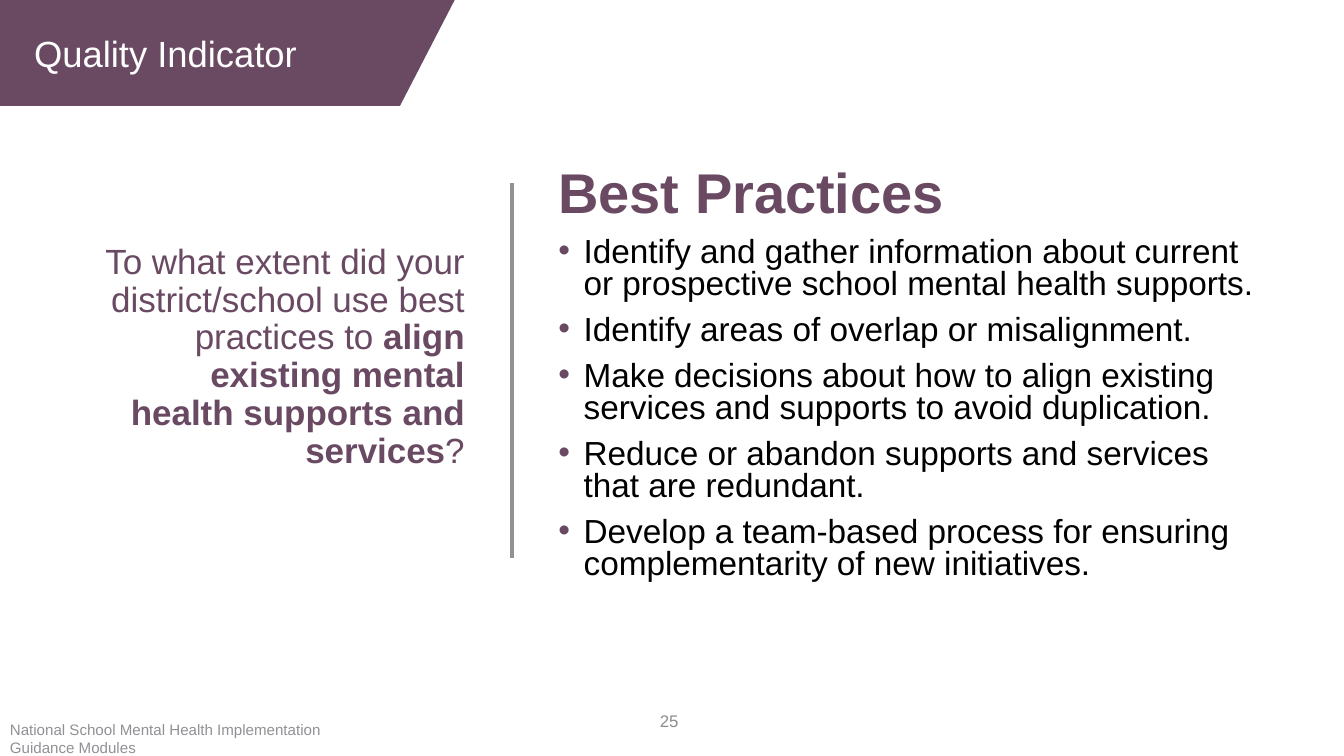
from dataclasses import dataclass

from lxml import etree
from pptx import Presentation
from pptx import util as u
from pptx.dml.color import RGBColor
from pptx.enum import shapes, text
from pptx.oxml import ns


@dataclass(frozen=True)
class Theme:
    """Colours, font and type sizes of the deck."""
    plum: str = "6A4A62"
    white: str = "FFFFFF"
    black: str = "000000"
    grey: str = "919195"
    pale: str = "8C8C8C"
    font: str = "Arial"
    head: float = 40
    label: float = 26
    ask: float = 25
    body: float = 23.8
    page: float = 12
    foot: float = 10.8


class Board:
    """Draws styled elements on one slide, with lengths in centimetres."""

    def __init__(self, slide, theme):
        self.slide = slide
        self.theme = theme

    def banner(self, points, color):
        """Draw a filled outline through the points."""
        first, *rest = [(u.Cm(x), u.Cm(y)) for x, y in points]
        pen = self.slide.shapes.build_freeform(*first)
        pen.add_line_segments(rest, close=True)
        form = pen.convert_to_shape()
        form.shadow.inherit = False
        form.fill.solid()
        form.fill.fore_color.rgb = RGBColor.from_string(color)
        form.line.fill.background()

    def rule(self, x, top, end, color, width):
        """Draw a vertical line."""
        line = self.slide.shapes.add_connector(
            shapes.MSO_CONNECTOR.STRAIGHT, u.Cm(x), u.Cm(top), u.Cm(x), u.Cm(end))
        line.line.color.rgb = RGBColor.from_string(color)
        line.line.width = u.Pt(width)
        props = line._element.spPr
        etree.SubElement(props, ns.qn("a:effectLst"))

    def box(self, left, top, width, height, middle=False, above=0.13, below=0.13):
        """Add an empty wrapping text box and return its frame."""
        area = self.slide.shapes.add_textbox(*map(u.Cm, (left, top, width, height)))
        frame = area.text_frame
        frame.word_wrap = True
        frame.margin_top, frame.margin_bottom = u.Cm(above), u.Cm(below)
        if middle:
            frame.vertical_anchor = text.MSO_ANCHOR.MIDDLE
        return frame

    def para(self, frame, words, size, color, bold=False, right=False,
             lead=None, gap=None, dot=None):
        """Write one paragraph, whose words may be (string, bold) pairs."""
        fresh = not frame.paragraphs[0].runs
        para = frame.paragraphs[0] if fresh else frame.add_paragraph()
        if lead:
            para.line_spacing = lead
        if gap and not fresh:
            para.space_before = u.Pt(gap)
        if right:
            para.alignment = text.PP_ALIGN.RIGHT
        if dot:
            self.bullet(para, dot)
        para.font.name = self.theme.font
        para.font.size = u.Pt(size)
        para.font.color.rgb = RGBColor.from_string(color)
        if isinstance(words, str):
            para.font.bold = bold
            words = [(words, None)]
        for part, heavy in words:
            run = para.add_run()
            run.text = part
            run.font.bold = heavy

    def bullet(self, para, color):
        """Give a paragraph a coloured bullet and a hanging indent."""
        props = para._p.get_or_add_pPr()
        props.set("marL", str(u.Cm(0.64)))
        props.set("indent", str(-u.Cm(0.64)))
        tint = etree.SubElement(props, ns.qn("a:buClr"))
        etree.SubElement(tint, ns.qn("a:srgbClr"), val=color)
        etree.SubElement(props, ns.qn("a:buFont"), typeface="Arial")
        etree.SubElement(props, ns.qn("a:buChar"), char="•")


def main():
    """Build and save the slide."""
    deck = Presentation()
    deck.slide_width, deck.slide_height = u.Cm(33.87), u.Cm(19.05)
    look = Theme()
    board = Board(deck.slides.add_slide(deck.slide_layouts[6]), look)

    page = board.box(9.73, 17.65, 7.62, 1.02, middle=True)
    board.para(page, "25", look.page, look.pale, right=True)

    board.banner([(0, 0), (11.46, 0), (10.08, 2.67), (0, 2.67)], look.plum)
    label = board.box(0.61, 0.66, 8.08, 1.37)
    board.para(label, "Quality Indicator", look.label, look.white)

    ask = board.box(2.26, 2.64, 9.7, 13.69, middle=True, below=1.09)
    board.para(ask, [
        ("To what extent did your district/school use best practices to ", False),
        ("align existing mental health supports and services", True),
        ("?", False),
    ], look.ask, look.plum, right=True, lead=0.9)

    best = board.box(13.82, 2.64, 18.34, 12.4, middle=True, above=1.4)
    board.para(best, "Best Practices", look.head, look.plum, bold=True, lead=0.8)
    for item in (
        "Identify and gather information about current or prospective school mental health supports.",
        "Identify areas of overlap or misalignment.",
        "Make decisions about how to align existing services and supports to avoid duplication.",
        "Reduce or abandon supports and services that are redundant.",
        "Develop a team-based process for ensuring complementarity of new initiatives.",
    ):
        board.para(best, item, look.body, look.black, lead=0.8, gap=10, dot=look.plum)

    board.rule(12.9, 4.62, 14.05, look.grey, 3)

    foot = board.box(0, 18.03, 9.68, 1.02)
    board.para(foot, "National School Mental Health Implementation Guidance Modules",
               look.foot, look.grey)

    deck.save("out.pptx")


if __name__ == "__main__":
    main()
